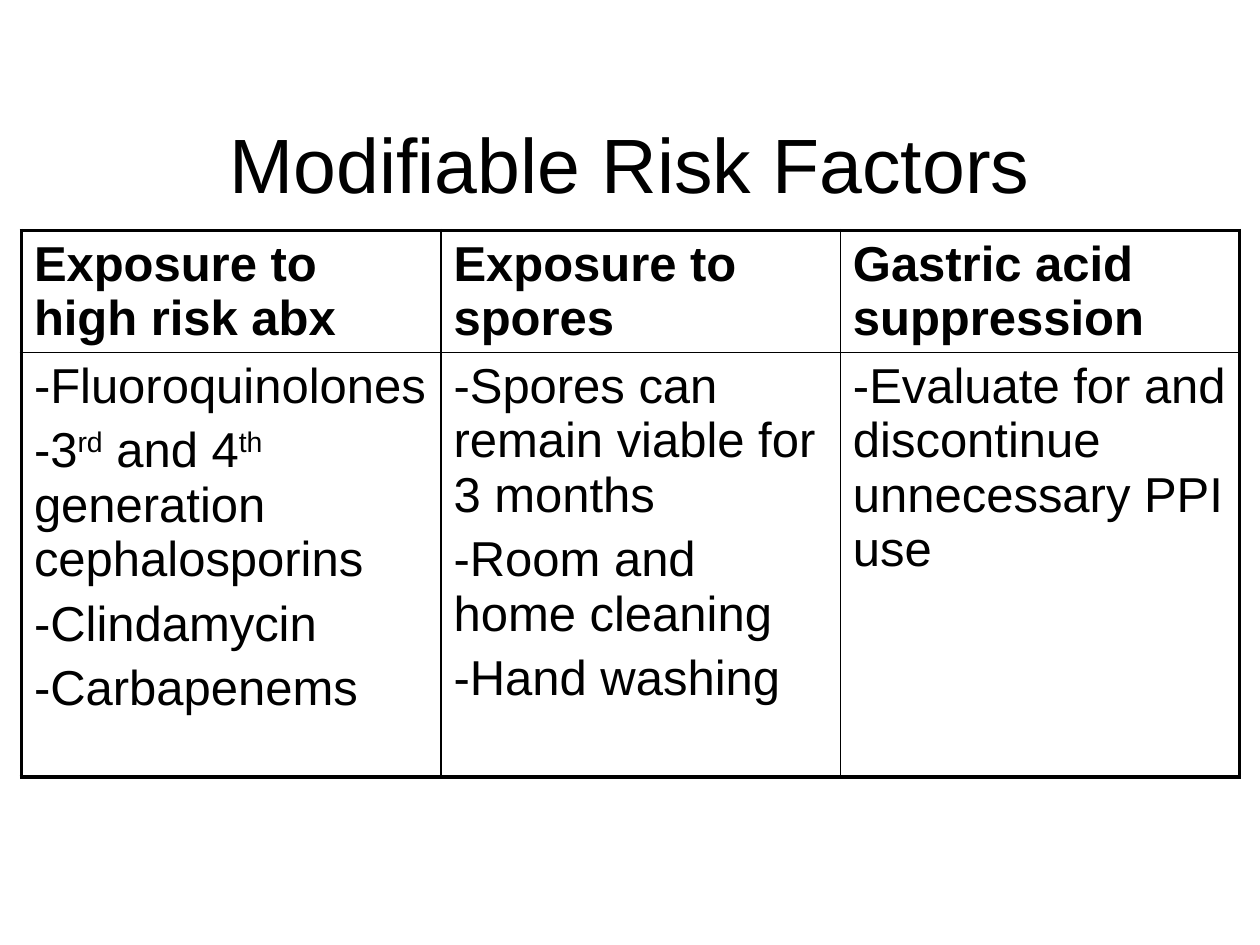
from pptx import Presentation
from pptx.dml.color import RGBColor
from pptx.enum.text import MSO_ANCHOR, PP_ALIGN
from pptx.oxml.ns import qn
from pptx.util import Inches, Pt
from lxml.etree import SubElement

BLACK = "000000"
WHITE = "FFFFFF"
THIN, THICK = 1, 2.25
COL_WIDTHS = [3.33, 3.17, 3.17]
ROW_HEIGHTS = [0.67, 3.37]

# Each cell is a list of paragraphs; odd pieces split by "^" are superscript.
ROWS = [
    [["Exposure to high risk abx"], ["Exposure to spores"],
     ["Gastric acid suppression"]],
    [["-Fluoroquinolones", "-3^rd^ and 4^th^ generation cephalosporins",
      "-Clindamycin", "-Carbapenems"],
     ["-Spores can remain viable for 3 months", "-Room and home cleaning",
      "-Hand washing"],
     ["-Evaluate for and discontinue unnecessary PPI use"]],
]


def color(hex_string):
    return RGBColor.from_string(hex_string)


def add_run(p, text, size, bold=False, superscript=False):
    r = p.add_run()
    r.text = text
    for name, value in {"name": "Arial", "size": Pt(size), "bold": bold}.items():
        setattr(r.font, name, value)
    r.font.color.rgb = color(BLACK)
    if superscript:
        r._r.get_or_add_rPr().set("baseline", "30000")


def add_title(s, text):
    sp = s.shapes.title
    box = {"left": 0.75, "top": 0.67, "width": 8.5, "height": 1.25}
    for name, value in box.items():
        setattr(sp, name, Inches(value))
    tf = sp.text_frame
    tf.vertical_anchor = MSO_ANCHOR.MIDDLE
    p = tf.paragraphs[0]
    p.alignment = PP_ALIGN.CENTER
    add_run(p, text, 44)


def fill_cell(cell, paragraphs, bold):
    tf = cell.text_frame
    for i, text in enumerate(paragraphs):
        p = tf.add_paragraph() if i else tf.paragraphs[0]
        p.alignment = PP_ALIGN.LEFT
        p.space_before = Pt(5.6)
        for j, piece in enumerate(text.split("^")):
            add_run(p, piece, 28, bold, superscript=j % 2 == 1)


def set_borders(cell, widths):
    """Draw the left, right, top and bottom borders, widths in points."""
    tc_pr = cell._tc.get_or_add_tcPr()
    for i, (side, width) in enumerate(widths.items()):
        ln = SubElement(tc_pr, qn(f"a:ln{side}"), w=str(Pt(width)))
        fill = SubElement(ln, qn("a:solidFill"))
        SubElement(fill, qn("a:srgbClr"), val=BLACK)
        tc_pr.insert(i, ln)


def add_risk_table(s):
    n_rows, n_cols = len(ROWS), len(COL_WIDTHS)
    frame = s.shapes.add_table(n_rows, n_cols, Inches(0.17), Inches(1.83),
                               Inches(9.67), Inches(4.4))
    table = frame.table
    table.first_row = table.horz_banding = False
    for column, width in zip(table.columns, COL_WIDTHS):
        column.width = Inches(width)
    for row, height in zip(table.rows, ROW_HEIGHTS):
        row.height = Inches(height)
    frame.height = Inches(4.4)
    for r, row in enumerate(ROWS):
        for c, paragraphs in enumerate(row):
            cell = table.cell(r, c)
            cell.fill.background()
            fill_cell(cell, paragraphs, bold=r == 0)
            set_borders(cell, {
                "L": THICK if c == 0 else THIN,
                "R": THICK if c == n_cols - 1 else THIN,
                "T": THICK if r == 0 else THIN,
                "B": THICK if r == n_rows - 1 else THIN,
            })


def main():
    prs = Presentation()
    prs.slide_width, prs.slide_height = Inches(10), Inches(7.5)
    s = prs.slides.add_slide(prs.slide_layouts[5])
    s.background.fill.solid()
    s.background.fill.fore_color.rgb = color(WHITE)
    add_title(s, "Modifiable Risk Factors")
    add_risk_table(s)
    prs.save("out.pptx")


if __name__ == "__main__":
    main()
